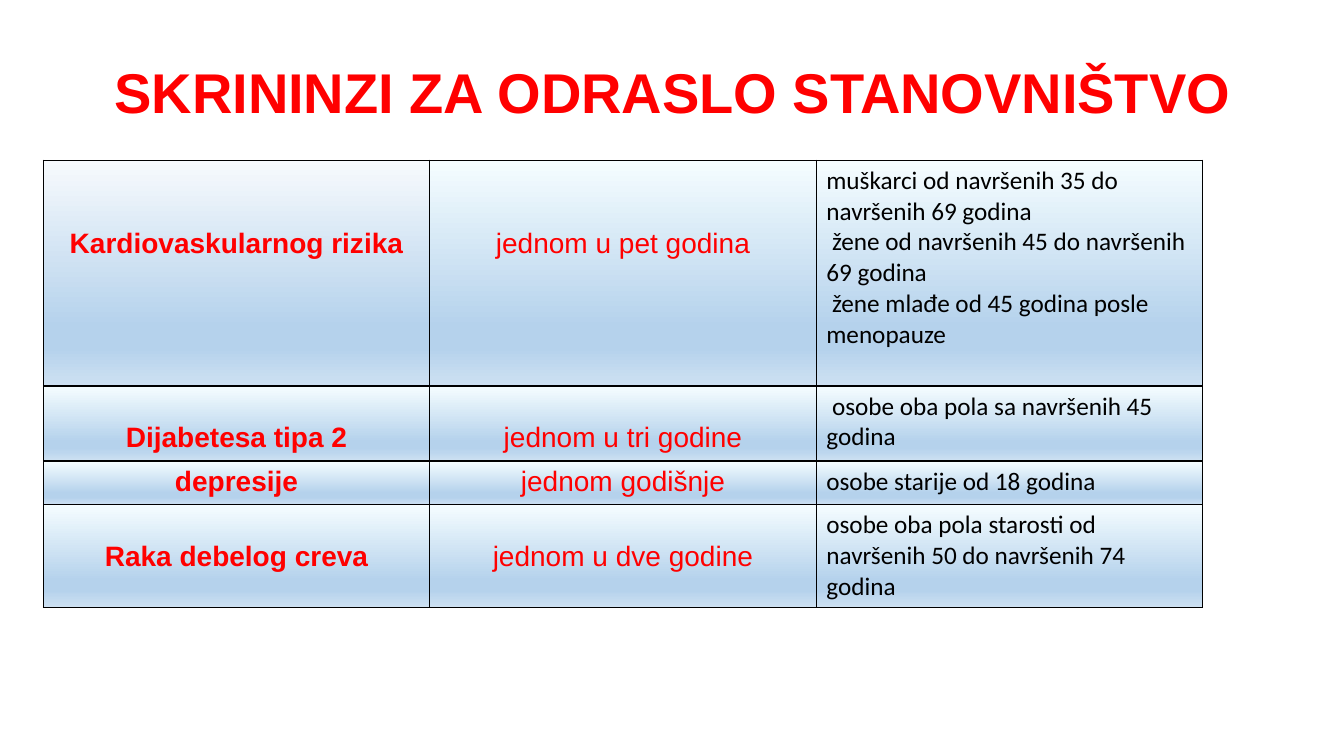
import pptx
import pptx.dml.color
import pptx.enum.text
import pptx.oxml
import pptx.oxml.ns
import pptx.util

Inches = pptx.util.Inches
ALIGN = pptx.enum.text.PP_ALIGN
ANCHOR = pptx.enum.text.MSO_ANCHOR

# Each row: height, blank space above the first two cells, the three cell texts
SCREENINGS = [
    (2.24, 0.62, "Kardiovaskularnog rizika", "jednom u pet godina",
     ["muškarci od navršenih 35 do navršenih 69 godina",
      " žene od navršenih 45 do navršenih 69 godina",
      " žene mlađe od 45 godina posle menopauze"]),
    (0.72, 0.31, "Dijabetesa tipa 2", "jednom u tri godine",
     [" osobe oba pola sa navršenih 45 godina"]),
    (0.41, 0, "depresije", "jednom godišnje",
     ["osobe starije od 18 godina"]),
    (1.02, 0.31, "Raka debelog creva", "jednom u dve godine",
     ["osobe oba pola starosti od navršenih 50 do navršenih 74 godina"]),
]


def color(value):
    return pptx.dml.color.RGBColor.from_string(value)


def write(text_frame, lines, size, font, ink, bold=False, align=ALIGN.LEFT, spacing=None):
    """Fill the text frame with one paragraph per line."""
    for index, line in enumerate(lines):
        paragraph = text_frame.add_paragraph() if index else text_frame.paragraphs[0]
        paragraph.alignment = align
        paragraph.line_spacing = spacing
        run = paragraph.add_run()
        run.text = line
        run.font.size = pptx.util.Pt(size)
        run.font.name = font
        run.font.bold = bold
        run.font.color.rgb = color(ink)


class SlideBuilder:
    RED = "FF0000"
    BLACK = "000000"
    GRADIENT = [(74, "B5D2EC"), (83, "B5D2EC"), (100, "CEE1F2")]

    def __init__(self, presentation):
        self.slide = presentation.slides.add_slide(presentation.slide_layouts[6])

    def title(self, text, left, top, width, height):
        box = self.slide.shapes.add_textbox(
            Inches(left), Inches(top), Inches(width), Inches(height))
        box.text_frame.word_wrap = True
        box.text_frame.vertical_anchor = ANCHOR.MIDDLE
        write(box.text_frame, [text], 40, "Arial", self.RED, bold=True,
              align=ALIGN.CENTER, spacing=0.9)

    def paint_cell(self, cell, top_color):
        """Give the cell black borders and a vertical gradient."""
        namespace = pptx.oxml.ns.nsdecls("a")
        properties = cell._tc.get_or_add_tcPr()
        for side in "LRTB":
            properties.append(pptx.oxml.parse_xml(
                f'<a:ln{side} {namespace} w="12700"><a:solidFill>'
                f'<a:srgbClr val="{self.BLACK}"/></a:solidFill></a:ln{side}>'))
        stops = "".join(
            f'<a:gs pos="{position * 1000}"><a:srgbClr val="{value}"/></a:gs>'
            for position, value in [(0, top_color)] + self.GRADIENT)
        properties.append(pptx.oxml.parse_xml(
            f'<a:gradFill {namespace}><a:gsLst>{stops}</a:gsLst>'
            '<a:lin ang="5400000" scaled="1"/></a:gradFill>'))

    def table(self, rows, left, top, width):
        height = sum(row[0] for row in rows)
        table = self.slide.shapes.add_table(
            len(rows), 3, Inches(left), Inches(top), Inches(width), Inches(height)).table
        table.first_row = False
        table.horz_banding = False
        for row_index, (row_height, gap, name, frequency, groups) in enumerate(rows):
            table.rows[row_index].height = Inches(row_height)
            cells = table.rows[row_index].cells
            for column, text in enumerate([name, frequency]):
                cells[column].margin_top = Inches(0.05 + gap)
                write(cells[column].text_frame, [text], 20, "Arial", self.RED,
                      bold=column == 0, align=ALIGN.CENTER)
            write(cells[2].text_frame, groups, 18, "Calibri", self.BLACK)
            for column, cell in enumerate(cells):
                self.paint_cell(cell, "F7FAFD" if row_index == column == 0 else "F5FDFF")


def main():
    presentation = pptx.Presentation()
    presentation.slide_width = Inches(13.33)
    presentation.slide_height = Inches(7.5)
    builder = SlideBuilder(presentation)
    builder.title("SKRININZI ZA ODRASLO STANOVNIŠTVO", 0.92, 0.4, 11.5, 1.1)
    builder.table(SCREENINGS, 0.43, 1.59, 11.5)
    presentation.save("out.pptx")


if __name__ == "__main__":
    main()
